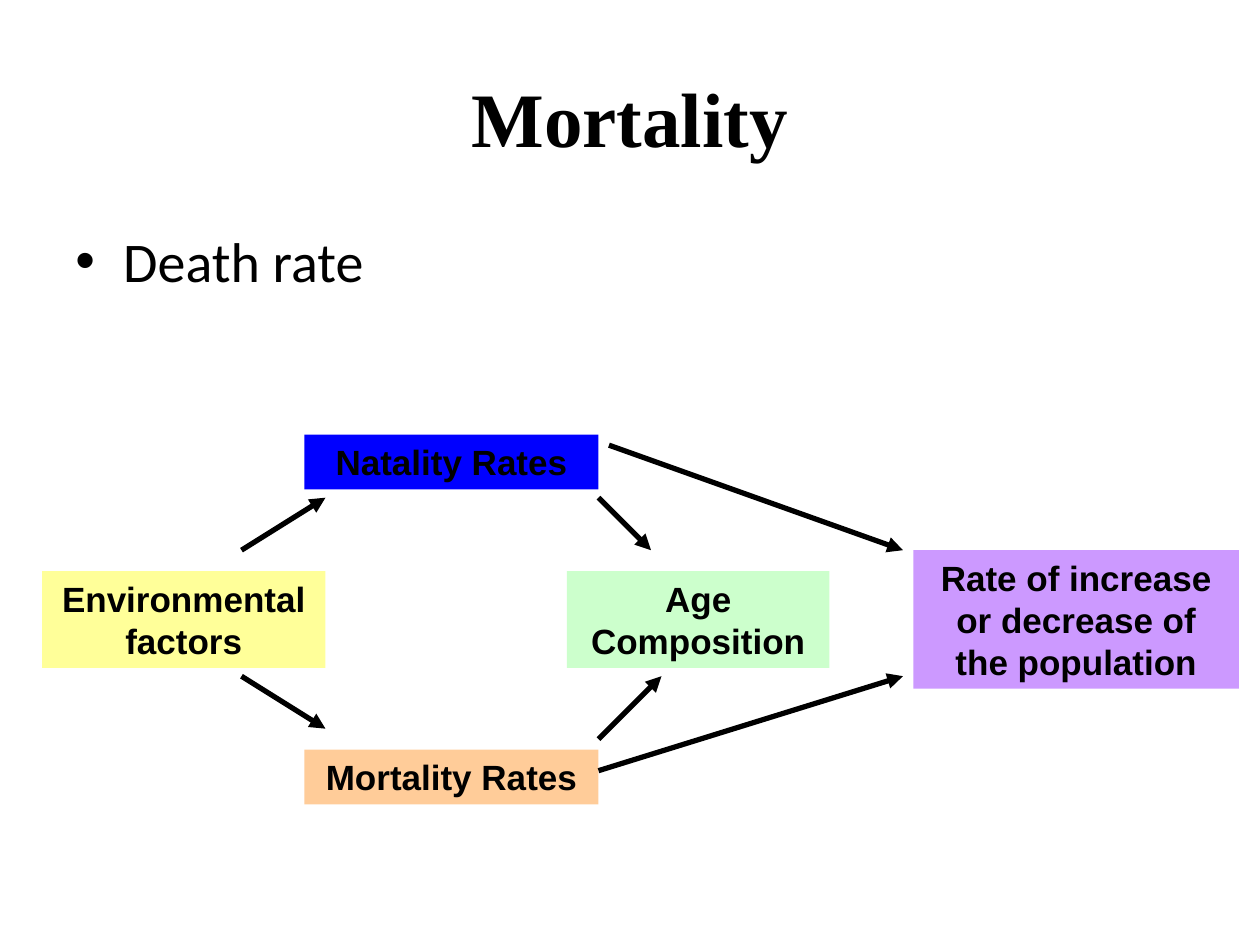
from lxml.etree import SubElement
from pptx import Presentation
from pptx.dml.color import RGBColor
from pptx.enum.shapes import MSO_CONNECTOR, MSO_SHAPE
from pptx.enum.text import MSO_ANCHOR, PP_ALIGN
from pptx.oxml.ns import qn
from pptx.util import Inches, Pt

BLACK = RGBColor(0, 0, 0)
YELLOW = RGBColor(0xFF, 0xFF, 0x99)
ORANGE = RGBColor(0xFF, 0xCC, 0x99)
BLUE = RGBColor(0, 0, 0xFF)
GREEN = RGBColor(0xCC, 0xFF, 0xCC)
PURPLE = RGBColor(0xCC, 0x99, 0xFF)

# The diagram sits on a grid of 120 columns by 90 rows, moved down a little.
UNIT = Inches(10) // 120
SHIFT = 0.4

TITLE = {"name": "Times New Roman", "size": Pt(44), "bold": True}
BODY = {"name": "Calibri", "size": Pt(32), "bold": False}
LABEL = {"name": "Arial", "size": Pt(20), "bold": True}


def write(shape, text, style, align, anchor):
    frame = shape.text_frame
    frame.word_wrap = True
    frame.vertical_anchor = anchor
    para = frame.paragraphs[0]
    para.alignment = align
    run = para.add_run()
    run.text = text
    run.font.color.rgb = BLACK
    for key, value in style.items():
        setattr(run.font, key, value)
    return para


def spot(col, row):
    """Turn a grid place into slide lengths."""
    return round(col * UNIT), round((row + SHIFT) * UNIT)


deck = Presentation()
deck.slide_width, deck.slide_height = Inches(10), Inches(7.5)
slide = deck.slides.add_slide(deck.slide_layouts[6])
shapes = slide.shapes

title = shapes.add_textbox(Inches(0.5), Inches(0.3), Inches(9), Inches(1.25))
write(title, "Mortality", TITLE, PP_ALIGN.CENTER, MSO_ANCHOR.MIDDLE)

body = shapes.add_textbox(Inches(0.5), Inches(1.75), Inches(9), Inches(4.95))
point = write(body, "Death rate", BODY, PP_ALIGN.LEFT, MSO_ANCHOR.TOP)
props = point._p.get_or_add_pPr()
props.set("marL", str(Inches(0.38)))
props.set("indent", str(-Inches(0.38)))
SubElement(props, qn("a:buFont")).set("typeface", "Arial")
SubElement(props, qn("a:buChar")).set("char", "•")

# Text, column, row, columns wide, lines of text, fill
boxes = [
    ("Environmental factors", 4, 54, 27, 2, YELLOW),
    ("Mortality Rates", 29, 71, 28, 1, ORANGE),
    ("Natality Rates", 29, 41, 28, 1, BLUE),
    ("Age Composition", 54, 54, 25, 2, GREEN),
    ("Rate of increase or decrease of the population", 87, 52, 31, 3, PURPLE),
]
for text, col, row, wide, lines, fill in boxes:
    high = 4 * lines + 1.2
    box = shapes.add_shape(MSO_SHAPE.RECTANGLE, *spot(col, row),
                           wide * UNIT, round(high * UNIT))
    box.shadow.inherit = False
    box.fill.solid()
    box.fill.fore_color.rgb = fill
    box.line.fill.background()
    write(box, text, LABEL, PP_ALIGN.CENTER, MSO_ANCHOR.TOP)

# Start column and row, end column and row
arrows = [
    (23, 52, 31, 47),
    (23, 64, 31, 69),
    (57, 70, 63, 64),
    (57, 47, 62, 52),
    (57, 73, 86, 64),
    (58, 42, 86, 52),
]
for *start, col, row in arrows:
    arrow = shapes.add_connector(MSO_CONNECTOR.STRAIGHT,
                                 *spot(*start), *spot(col, row))
    arrow.line.color.rgb = BLACK
    arrow.line.width = Pt(3)
    SubElement(arrow.line._get_or_add_ln(), qn("a:tailEnd")).set("type", "triangle")
    SubElement(arrow._element.spPr, qn("a:effectLst"))

deck.save("out.pptx")
